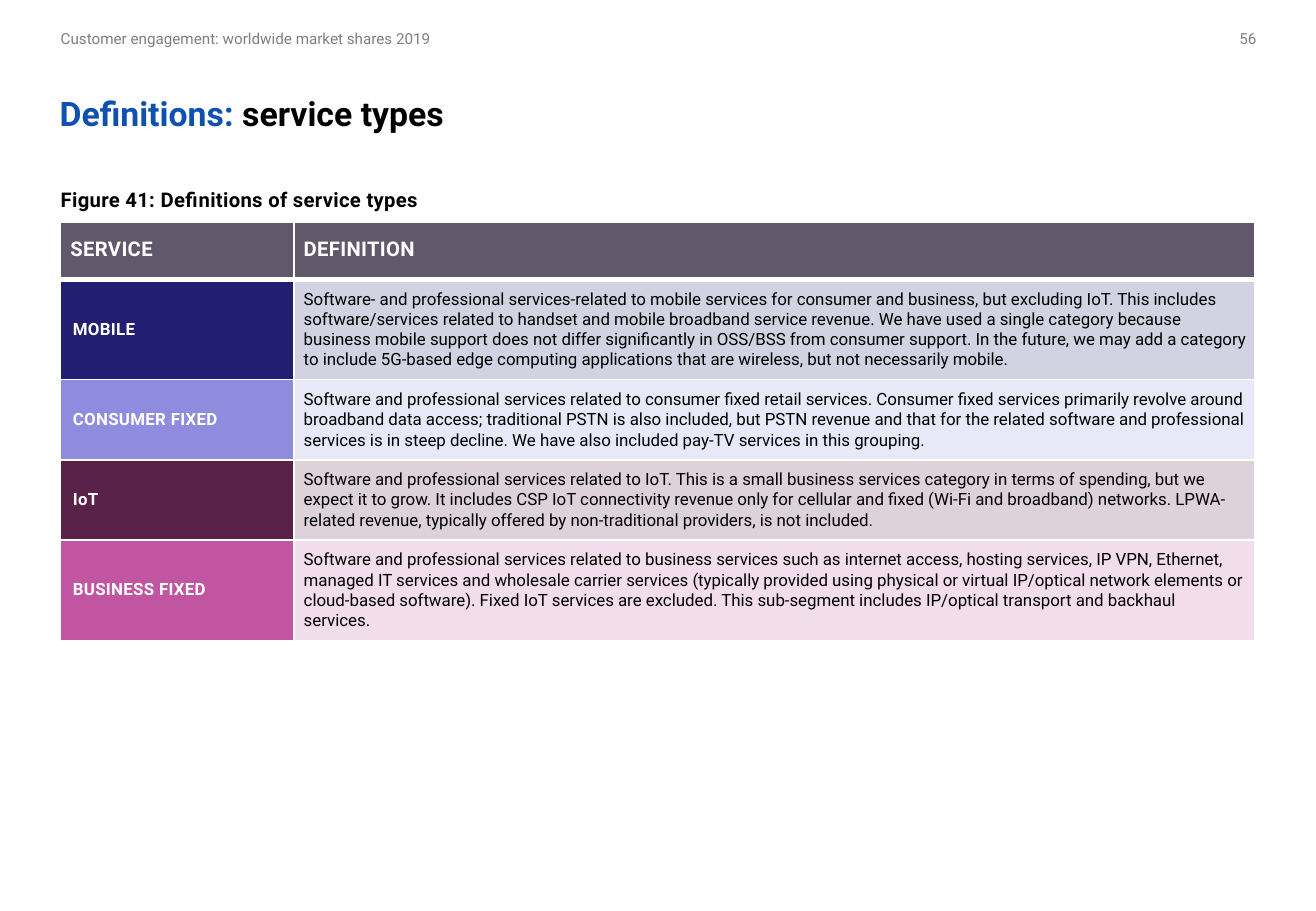
from lxml import etree
from pptx import Presentation, util as u
from pptx.dml.color import RGBColor
from pptx.enum import text
from pptx.oxml.ns import qn

INK, WHITE = "000000", "FFFFFF"
HEADER_FILL = "61586C"
CELL_INSET = 0.08
CELL_PARA = {"line_spacing": u.Pt(12), "space_before": u.Pt(2), "space_after": u.Pt(2)}

SERVICES = [
    ("MOBILE", "221F72", 0.82,
     "Software- and professional services-related to mobile services for consumer and business, "
     "but excluding IoT. This includes software/services related to handset and mobile broadband "
     "service revenue. We have used a single category because business mobile support does not "
     "differ significantly in OSS/BSS from consumer support. In the future, we may add a category "
     "to include 5G-based edge computing applications that are wireless, but not necessarily mobile."),
    ("CONSUMER FIXED", "8F8CE0", 0.66,
     "Software and professional services related to consumer fixed retail services. Consumer fixed "
     "services primarily revolve around broadband data access; traditional PSTN is also included, "
     "but PSTN revenue and that for the related software and professional services is in steep "
     "decline. We have also included pay-TV services in this grouping."),
    ("IoT", "5A2149", 0.66,
     "Software and professional services related to IoT. This is a small business services category "
     "in terms of spending, but we expect it to grow. It includes CSP IoT connectivity revenue only "
     "for cellular and fixed (Wi-Fi and broadband) networks. LPWA-related revenue, typically offered "
     "by non-traditional providers, is not included."),
    ("BUSINESS FIXED", "C155A1", 0.82,
     "Software and professional services related to business services such as internet access, "
     "hosting services, IP VPN, Ethernet, managed IT services and wholesale carrier services "
     "(typically provided using physical or virtual IP/optical network elements or cloud-based "
     "software). Fixed IoT services are excluded. This sub-segment includes IP/optical transport "
     "and backhaul services."),
]


def colour(value):
    return RGBColor.from_string(value)


def apply(target, values):
    for name, value in values.items():
        setattr(target, name, value)


class SlideBuilder:
    font = "Roboto"

    def __init__(self, deck):
        self.slide = deck.slides.add_slide(deck.slide_layouts[5])

    def add_spans(self, para, spans, size, bold=False, spacing=0, **para_format):
        apply(para, para_format)
        for words, ink in spans:
            span = para.add_run()
            span.text = words
            apply(span.font, {"name": self.font, "size": u.Pt(size), "bold": bold})
            span.font.color.rgb = colour(ink)
            if spacing:
                span._r.get_or_add_rPr().set("spc", str(spacing))

    def frame(self, box, anchor):
        apply(box.text_frame, {
            "word_wrap": True, "auto_size": text.MSO_AUTO_SIZE.NONE, "vertical_anchor": anchor,
            "margin_left": 0, "margin_right": 0,
            "margin_top": u.Inches(0.05), "margin_bottom": u.Inches(0.05)})
        return box.text_frame.paragraphs[0]

    def title(self, place, spans):
        box = self.slide.shapes.title
        apply(box, dict(zip(("left", "top", "width", "height"), map(u.Inches, place))))
        self.add_spans(self.frame(box, text.MSO_ANCHOR.MIDDLE), spans, 20, True,
                       line_spacing=u.Pt(25), alignment=text.PP_ALIGN.LEFT)

    def label(self, place, words, ink, size, anchor=text.MSO_ANCHOR.MIDDLE, **style):
        box = self.slide.shapes.add_textbox(*map(u.Inches, place))
        self.add_spans(self.frame(box, anchor), [(words, ink)], size, **style)

    def table(self, place, widths, heights):
        grid = self.slide.shapes.add_table(len(heights), len(widths), *map(u.Inches, place)).table
        for column, width in zip(grid.columns, widths):
            column.width = u.Inches(width)
        for row, height in zip(grid.rows, heights):
            row.height = u.Inches(height)
        return grid

    def cell(self, cell, words, ink, size, fill, alpha=100, inset=None, edges=None, **style):
        cell.vertical_anchor = text.MSO_ANCHOR.MIDDLE
        if inset:
            apply(cell, {f"margin_{side}": u.Inches(inset)
                         for side in ("left", "right", "top", "bottom")})
        properties = cell._tc.get_or_add_tcPr()
        for side in "LRTB":
            width = u.Pt((edges or {}).get(side, 1))
            line = etree.SubElement(properties, qn(f"a:ln{side}"), w=str(int(width)))
            solid = etree.SubElement(line, qn("a:solidFill"))
            etree.SubElement(solid, qn("a:srgbClr"), val=WHITE)
        cell.fill.solid()
        cell.fill.fore_color.rgb = colour(fill)
        if alpha < 100:
            shade = properties.find(qn("a:solidFill"))[0]
            etree.SubElement(shade, qn("a:alpha"), val=str(alpha * 1000))
        self.add_spans(cell.text_frame.paragraphs[0], [(words, ink)], size, **style)


def main():
    deck = Presentation()
    apply(deck, {"slide_width": u.Inches(10.83), "slide_height": u.Inches(7.5)})
    page = SlideBuilder(deck)
    page.label((0.5, 0.16, 3.23, 0.31), "Customer engagement: worldwide market shares 2019",
               "7F7F7F", 9)
    page.label((9.59, 0.16, 0.75, 0.31), "56", "808080", 9, alignment=text.PP_ALIGN.RIGHT)
    page.title((0.49, 0.51, 9.84, 0.83), [("Definitions: ", "0F51B1"), ("service types", INK)])
    page.label((0.5, 1.49, 9.84, 0.28), "Figure 41: Definitions of service types", INK, 12,
               anchor=text.MSO_ANCHOR.TOP, bold=True, spacing=20)

    heights = [0.47] + [height for _, _, height, _ in SERVICES]
    grid = page.table((0.5, 1.83, 9.83, sum(heights)), (1.92, 7.91), heights)
    for column, heading in enumerate(("SERVICE", "DEFINITION")):
        page.cell(grid.cell(0, column), heading, WHITE, 12, HEADER_FILL, inset=CELL_INSET,
                  edges={"B": 3}, bold=True, spacing=20, **CELL_PARA)
    for row, (service, fill, _, definition) in enumerate(SERVICES, 1):
        edges = {"T": 3} if row == 1 else {}
        page.cell(grid.cell(row, 0), service, WHITE, 10, fill, edges=edges, bold=True, spacing=20)
        page.cell(grid.cell(row, 1), definition, INK, 10, fill, alpha=20, inset=CELL_INSET,
                  edges=edges, **CELL_PARA)
    deck.save("out.pptx")


if __name__ == "__main__":
    main()
